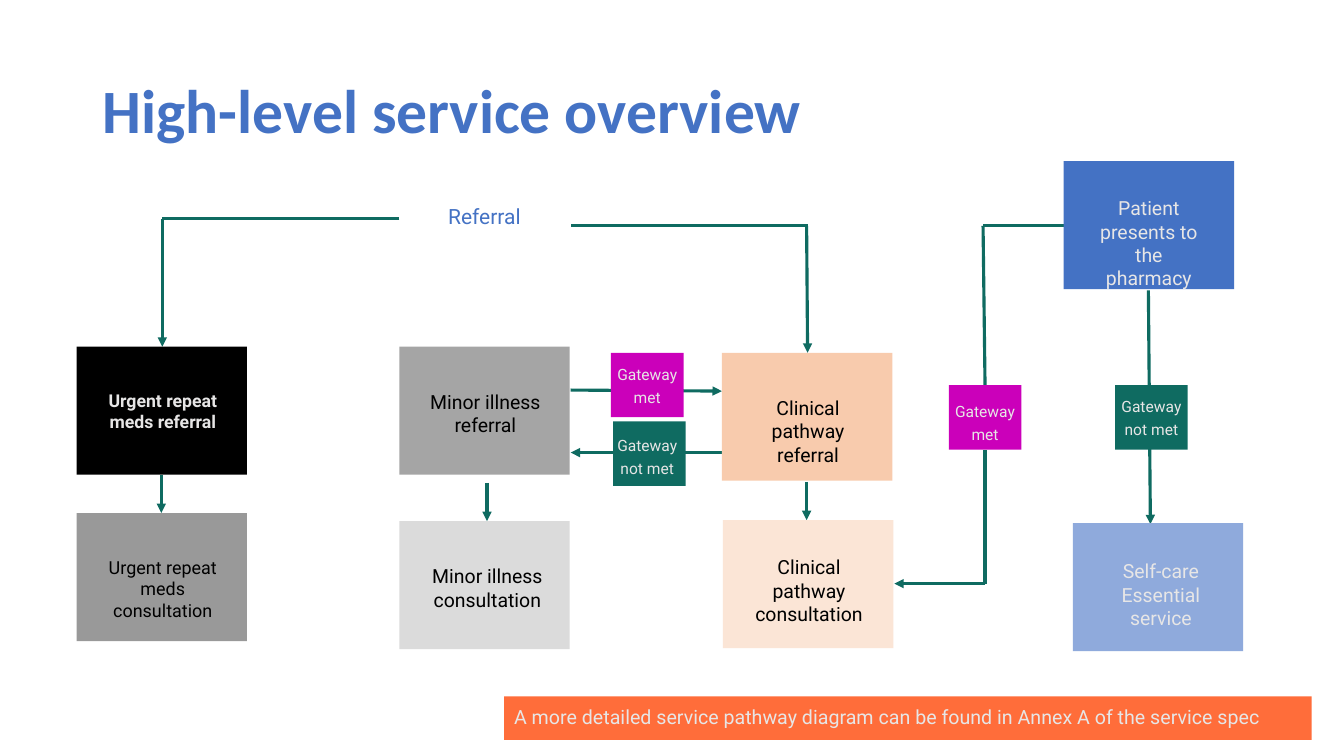
from lxml import etree
from pptx import Presentation
from pptx.dml.color import RGBColor
from pptx.enum.shapes import MSO_CONNECTOR, MSO_SHAPE
from pptx.enum.text import MSO_ANCHOR, PP_ALIGN
from pptx.oxml.ns import qn
from pptx.util import Inches, Pt

BLUE, TEAL, MAGENTA, ORANGE = "4472C4", "0F6B61", "CB00BA", "FF6D3A"
BLACK, PALE = "000000", "E7E6E6"
STEP_SIZE = (1.69, 1.27)
GATE_SIZE = (0.72, 0.64)

STEPS = [
    (0.76, 3.44, BLACK, "Urgent repeat meds referral", 0.95, 3.82, 12.6, PALE, True),
    (3.96, 3.44, "A5A5A5", "Minor illness referral", 4.15, 3.82, 13.9, BLACK, False),
    (7.16, 3.5, "F8CBAD", "Clinical pathway referral", 7.35, 3.88, 13.9, BLACK, False),
    (10.55, 1.6, BLUE, "Patient presents to the pharmacy", 10.73, 1.9, 13.9, PALE, False),
    (7.17, 5.16, "FBE5D6", "Clinical pathway consultation", 7.36, 5.46, 13.9, BLACK, False),
    (3.96, 5.17, "DBDBDB", "Minor illness consultation", 4.17, 5.55, 13.9, BLACK, False),
    (0.76, 5.09, "999999", "Urgent repeat meds consultation", 0.95, 5.47, 12.8, BLACK, False),
    (10.64, 5.19, "8FAADC", "Self-care Essential service", 10.85, 5.5, 13.9, PALE, False),
]

GATES = [
    (9.41, 3.82, MAGENTA, "met", 9.35, 3.94),
    (11.06, 3.82, TEAL, "not met", 11, 3.89),
    (6.06, 3.5, MAGENTA, "met", 6, 3.57),
    (6.08, 4.18, TEAL, "not met", 6, 4.28),
]

ARROWS = [
    (11.39, 2.88, 11.41, 5.2),
    (5.66, 3.87, 7.16, 3.88),
    (7.16, 4.49, 5.66, 4.49),
    (1.61, 2.17, 1.61, 3.44),
    (8, 2.24, 8.01, 3.5),
    (4.83, 4.79, 4.83, 5.17),
    (1.6, 4.71, 1.6, 5.09),
    (8, 4.78, 8, 5.16),
    (9.77, 5.79, 8.87, 5.79),
]

PLAIN_LINES = [
    (3.96, 2.17, 1.61, 2.17),
    (8.01, 2.24, 5.66, 2.24),
    (9.77, 3.82, 9.75, 2.24),
    (10.55, 2.24, 9.75, 2.24),
    (9.77, 5.79, 9.77, 4.46),
]


def color(code):
    return RGBColor.from_string(code)


def add_block(slide, left, top, width, height, fill):
    block = slide.shapes.add_shape(
        MSO_SHAPE.RECTANGLE, Inches(left), Inches(top), Inches(width), Inches(height))
    block.shadow.inherit = False
    block.fill.solid()
    block.fill.fore_color.rgb = color(fill)
    block.line.fill.background()


def add_label(slide, left, top, width, height, lines, size, ink, font="Roboto",
              bold=False, align=PP_ALIGN.CENTER, anchor=MSO_ANCHOR.TOP,
              spacing=None, before=0):
    label = slide.shapes.add_textbox(
        Inches(left), Inches(top), Inches(width), Inches(height))
    frame = label.text_frame
    frame.word_wrap = True
    frame.vertical_anchor = anchor
    for index, line in enumerate(lines):
        paragraph = frame.add_paragraph() if index else frame.paragraphs[0]
        paragraph.alignment = align
        paragraph.space_before = Pt(before)
        if spacing:
            paragraph.line_spacing = spacing
        run = paragraph.add_run()
        run.text = line
        run.font.name = font
        run.font.size = Pt(size)
        run.font.bold = bold
        run.font.color.rgb = color(ink)


def add_flow(slide, x1, y1, x2, y2, arrow=False):
    flow = slide.shapes.add_connector(
        MSO_CONNECTOR.STRAIGHT, Inches(x1), Inches(y1), Inches(x2), Inches(y2))
    flow.line.color.rgb = color(TEAL)
    flow.line.width = Pt(2.25)
    if arrow:
        tail = etree.SubElement(flow.line._get_or_add_ln(), qn("a:tailEnd"))
        tail.set("type", "triangle")
    etree.SubElement(flow._element.spPr, qn("a:effectLst"))


def add_step(slide, left, top, fill, text, text_left, text_top, size, ink, bold):
    add_block(slide, left, top, *STEP_SIZE, fill)
    height = 0.9 if fill == BLUE else 0.68
    add_label(slide, text_left, text_top, 1.33, height, [text], size, ink, bold=bold)


def add_gate(slide, left, top, fill, outcome, text_left, text_top):
    add_block(slide, left, top, *GATE_SIZE, fill)
    add_label(slide, text_left, text_top, 0.84, 0.49, ["Gateway", outcome],
              11.1, PALE, before=3)


def main():
    deck = Presentation()
    deck.slide_width = Inches(13.33)
    deck.slide_height = Inches(7.5)
    slide = deck.slides.add_slide(deck.slide_layouts[6])

    add_label(slide, 0.92, 0.4, 11.5, 1.45, ["High-level service overview"], 44, BLUE,
              font="Calibri", bold=True, align=PP_ALIGN.LEFT,
              anchor=MSO_ANCHOR.MIDDLE, spacing=0.9)
    add_label(slide, 4.14, 2, 1.33, 0.47, ["Referral"], 15, BLUE, spacing=0.9, before=10)

    for arrow in ARROWS:
        add_flow(slide, *arrow, arrow=True)
    for line in PLAIN_LINES:
        add_flow(slide, *line)
    for step in STEPS:
        add_step(slide, *step)
    for gate in GATES:
        add_gate(slide, *gate)

    add_block(slide, 5, 6.91, 8.01, 0.43, ORANGE)
    add_label(slide, 5, 6.94, 8.01, 0.34,
              ["A more detailed service pathway diagram can be found in Annex A of the service spec"],
              14, PALE, align=PP_ALIGN.LEFT)

    deck.save("out.pptx")


if __name__ == "__main__":
    main()
